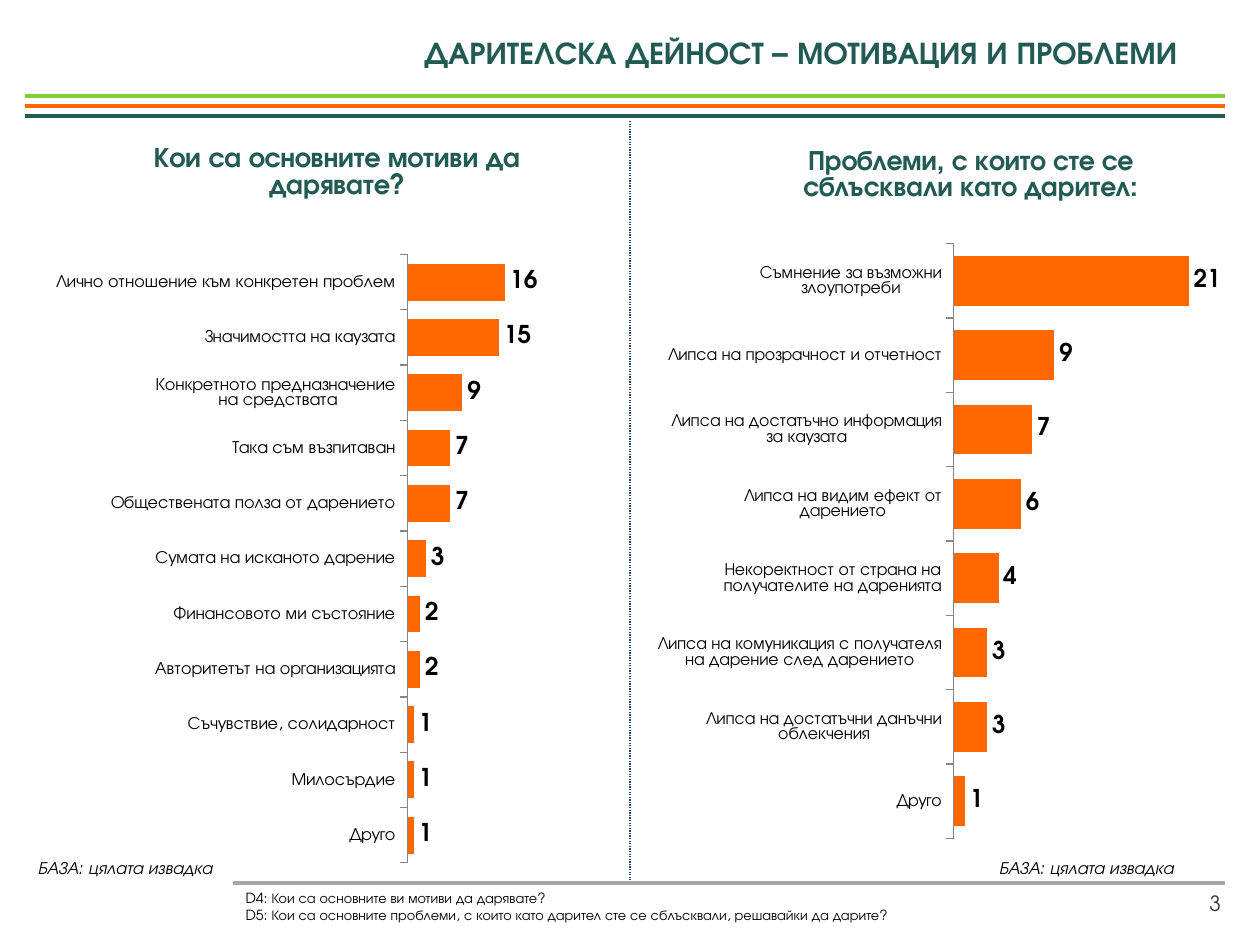
from lxml import etree
from pptx import Presentation
from pptx.chart.data import CategoryChartData
from pptx.dml.color import RGBColor
from pptx.enum.chart import XL_CHART_TYPE, XL_LABEL_POSITION, XL_TICK_MARK
from pptx.enum.dml import MSO_LINE
from pptx.enum.shapes import MSO_CONNECTOR
from pptx.enum.text import PP_ALIGN
from pptx.oxml import parse_xml
from pptx.oxml.ns import nsdecls, qn
from pptx.util import Inches, Pt

FONT = "TeX Gyre Adventor"
COLORS = {
    "green": "80CD3D", "orange": "FF6700", "teal": "225A54", "gray": "A6A6A6",
    "navy": "1D3F71", "black": "000000", "number": "39342D", "axis": "868686",
}


def style_font(font, size, color, bold=False, italic=False):
    font.name = FONT
    font.size = Pt(size)
    font.bold = bold
    font.italic = italic
    font.color.rgb = RGBColor.from_string(COLORS[color])


def set_layout(parent, index, **settings):
    """Place a chart part by hand, in fractions of the chart area."""
    for old in parent.findall(qn("c:layout")):
        parent.remove(old)
    items = "".join(f'<c:{tag} val="{value}"/>' for tag, value in settings.items())
    parent.insert(index, parse_xml(
        f'<c:layout {nsdecls("c")}><c:manualLayout>{items}</c:manualLayout></c:layout>'))


deck = Presentation()
deck.slide_width = Inches(10)
deck.slide_height = Inches(7.5)
page = deck.slides.add_slide(deck.slide_layouts[6])

# Header rules, footer rule and the dotted divider
rules = [
    (0.2, 0.76, 9.72, 0.76, "green", 2),
    (0.2, 0.84, 9.72, 0.84, "orange", 2),
    (0.2, 0.92, 9.72, 0.92, "teal", 2),
    (1.85, 7.01, 9.72, 7.01, "gray", 2),
    (5, 0.96, 5, 6.98, "navy", 0.75),
]
for x1, y1, x2, y2, color, width in rules:
    rule = page.shapes.add_connector(
        MSO_CONNECTOR.STRAIGHT, Inches(x1), Inches(y1), Inches(x2), Inches(y2))
    rule.line.color.rgb = RGBColor.from_string(COLORS[color])
    rule.line.width = Pt(width)
    if x1 == x2:
        rule.line.dash_style = MSO_LINE.ROUND_DOT
    etree.SubElement(rule._element.spPr, qn("a:effectLst"))

# Bar charts
motives = [
    ("Лично отношение към конкретен проблем", 16),
    ("Значимостта на каузата", 15),
    ("Конкретното предназначение\n на средствата", 9),
    ("Така съм възпитаван", 7),
    ("Обществената полза от дарението", 7),
    ("Сумата на исканото дарение", 3),
    ("Финансовото ми състояние", 2),
    ("Авторитетът на организацията", 2),
    ("Съчувствие, солидарност", 1),
    ("Милосърдие", 1),
    ("Друго", 1),
]
problems = [
    ("Съмнение за възможни злоупотреби", 21),
    ("Липса на прозрачност и отчетност", 9),
    ("Липса на достатъчно информация за каузата", 7),
    ("Липса на видим ефект от дарението", 6),
    ("Некоректност от страна на получателите на даренията", 4),
    ("Липса на комуникация с получателя на дарение след дарението", 3),
    ("Липса на достатъчни данъчни облекчения", 3),
    ("Друго", 1),
]
# title, answers, chart left/top/height, axis maximum, title x/y, plot x/y/w/h
charts = [
    ("Кои са основните мотиви да дарявате?", motives, (0.22, 1.04, 5.94), 18,
     (0.21, 0.01), (0.66, 0.165, 0.19, 0.813)),
    ("Проблеми, с които сте се сблъсквали като дарител:", problems,
     (5.22, 1.06, 5.64), 25, (0.23, 0.01), (0.505, 0.155, 0.495, 0.837)),
]
for title, answers, (left, top, height), maximum, title_at, plot_at in charts:
    data = CategoryChartData(number_format="0")
    data.categories = [answer for answer, value in answers]
    data.add_series("Series 1", [value for answer, value in answers])
    chart = page.shapes.add_chart(
        XL_CHART_TYPE.BAR_CLUSTERED, Inches(left), Inches(top),
        Inches(4.57), Inches(height), data).chart
    style_font(chart.font, 18, "black")
    chart.has_legend = False

    # Title
    chart.has_title = True
    span = chart.chart_title.text_frame.paragraphs[0].add_run()
    span.text = title
    style_font(span.font, 16, "teal", bold=True)
    title_part = chart.chart_title._element
    set_layout(title_part, 1, xMode="edge", yMode="edge", x=title_at[0], y=title_at[1])
    title_part.find(qn("c:overlay")).set("val", "1")

    # Bars and value labels
    plot = chart.plots[0]
    plot.gap_width = 50
    plot.vary_by_categories = False
    fill = plot.series[0].format.fill
    fill.solid()
    fill.fore_color.rgb = RGBColor.from_string(COLORS["orange"])
    plot.has_data_labels = True
    labels = plot.data_labels
    labels.show_value = True
    labels.position = XL_LABEL_POSITION.OUTSIDE_END
    labels.number_format = "0"
    labels.number_format_is_linked = False
    style_font(labels.font, 14, "black", bold=True)

    # Axes
    category_axis = chart.category_axis
    category_axis.reverse_order = True
    category_axis.has_major_gridlines = False
    category_axis.major_tick_mark = XL_TICK_MARK.OUTSIDE
    category_axis.format.line.color.rgb = RGBColor.from_string(COLORS["axis"])
    style_font(category_axis.tick_labels.font, 10, "black")
    value_axis = chart.value_axis
    value_axis.visible = False
    value_axis.has_major_gridlines = False
    value_axis.minimum_scale = 0
    value_axis.maximum_scale = maximum

    x, y, w, h = plot_at
    plot_area = chart._chartSpace.chart.plotArea
    set_layout(plot_area, 0, layoutTarget="inner", xMode="edge", yMode="edge",
               x=x, y=y, w=w, h=h)

# Heading, base notes, questions and page number
base_note = "БАЗА: цялата извадка"
texts = [
    ((3.27, 0.21, 6.63, 0.4), ["ДАРИТЕЛСКА ДЕЙНОСТ – МОТИВАЦИЯ И ПРОБЛЕМИ"],
     18, "teal", True, False, PP_ALIGN.LEFT),
    ((0.2, 6.75, 3.07, 0.27), [base_note], 10, "black", False, True, PP_ALIGN.LEFT),
    ((7.83, 6.75, 1.93, 0.27), [base_note], 10, "black", False, True, PP_ALIGN.LEFT),
    ((1.85, 7.01, 7.48, 0.37),
     ["D4: Кои са основните ви мотиви да дарявате?",
      "D5: Кои са основните проблеми, с които като дарител сте се сблъсквали, "
      "решавайки да дарите?"],
     8, "black", False, False, PP_ALIGN.LEFT),
    ((7.46, 7.02, 2.33, 0.4), ["3"], 12, "number", False, False, PP_ALIGN.RIGHT),
]
for place, lines, size, color, bold, italic, alignment in texts:
    box = page.shapes.add_textbox(*[Inches(length) for length in place])
    frame = box.text_frame
    frame.word_wrap = True
    for number, line in enumerate(lines):
        para = frame.add_paragraph() if number else frame.paragraphs[0]
        para.alignment = alignment
        span = para.add_run()
        span.text = line
        style_font(span.font, size, color, bold, italic)

deck.save("out.pptx")
